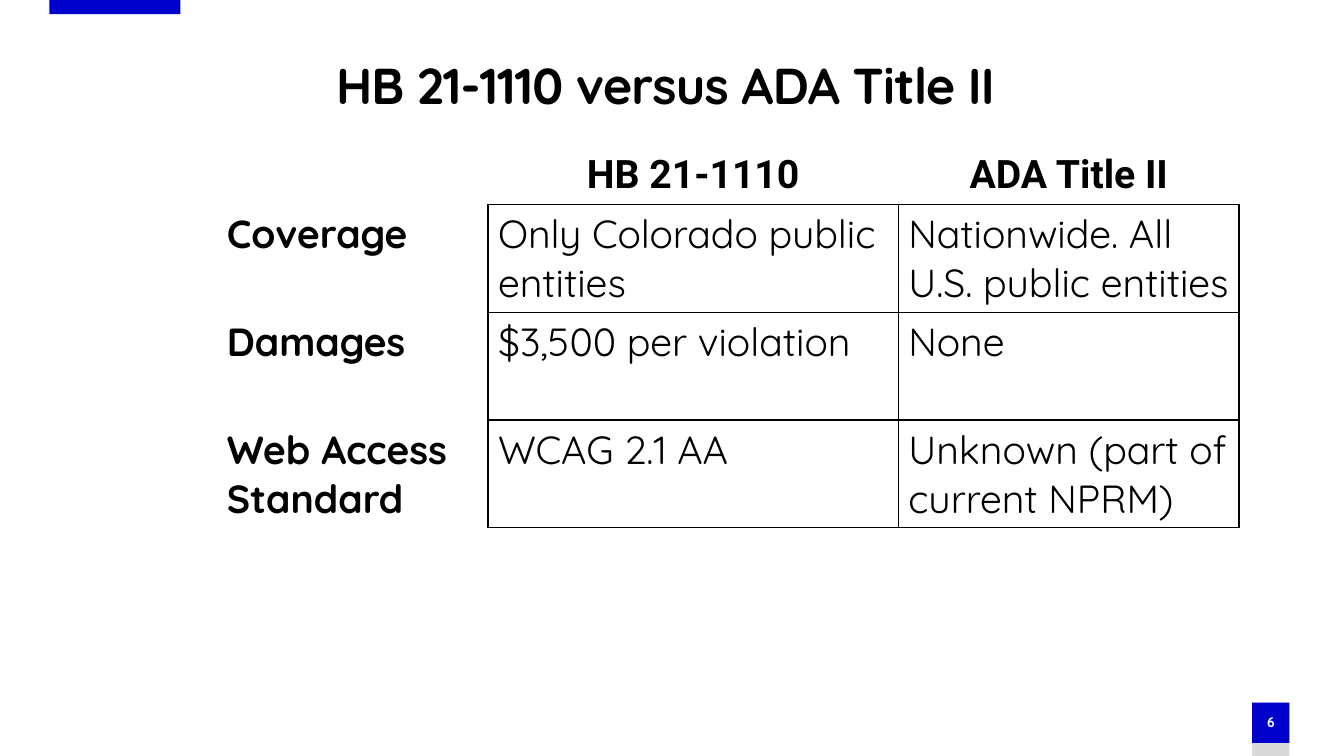
"""Build a slide comparing HB 21-1110 with ADA Title II."""
from lxml.etree import SubElement
from pptx import Presentation
from pptx.dml.color import RGBColor
from pptx.enum.shapes import MSO_SHAPE
from pptx.enum.text import MSO_ANCHOR, PP_ALIGN
from pptx.oxml.ns import qn
from pptx.util import Inches, Pt

TITLE = "HB 21-1110 versus ADA Title II"
PAGE_NUMBER = "6"
ROWS = [
    ("", "HB 21-1110", "ADA Title II"),
    ("Coverage", "Only Colorado public entities", "Nationwide. All U.S. public entities"),
    ("Damages", "$3,500 per violation", "None"),
    ("Web Access Standard", "WCAG 2.1 AA", "Unknown (part of current NPRM)"),
    ("", "", ""),
]
COLUMN_WIDTHS = (2.69, 4.07, 3.38)
ROW_HEIGHTS = (0.56, 1.07, 1.07, 1.07, 0.41)
TABLE_LEFT, TABLE_TOP = 2.15, 1.46
BLOCKS = [
    ((12.42, 6.97, 0.37, 0.53), "D9D9D9", ""),
    ((12.42, 6.97, 0.37, 0.4), "0000CD", PAGE_NUMBER),
    ((0.49, 0, 1.3, 0.14), "0000CD", ""),
]
SIDES = {"a:lnL": (0, -1), "a:lnR": (0, 1), "a:lnT": (-1, 0), "a:lnB": (1, 0)}
BLACK, WHITE = "000000", "FFFFFF"


def color(value):
    return RGBColor.from_string(value)


def style(paragraph, size, text_color, bold=True, name="Quicksand", align=PP_ALIGN.CENTER):
    paragraph.alignment = align
    font = paragraph.font
    font.size, font.bold, font.name = Pt(size), bold, name
    font.color.rgb = color(text_color)


def add_block(slide, box, fill, text):
    shape = slide.shapes.add_shape(MSO_SHAPE.RECTANGLE, *map(Inches, box))
    shape.shadow.inherit = False
    shape.fill.solid()
    shape.fill.fore_color.rgb = color(fill)
    shape.line.fill.background()
    if text:
        frame = shape.text_frame
        frame.margin_left = frame.margin_right = 0
        frame.vertical_anchor = MSO_ANCHOR.MIDDLE
        paragraph = frame.paragraphs[0]
        paragraph.text = text
        paragraph.line_spacing = 0.9
        paragraph.space_before = Pt(10)
        style(paragraph, 10, WHITE)


def add_title(slide):
    box = slide.shapes.add_textbox(*map(Inches, (0.49, 0.55, 12.22, 0.65)))
    frame = box.text_frame
    frame.word_wrap = True
    frame.vertical_anchor = MSO_ANCHOR.MIDDLE
    paragraph = frame.paragraphs[0]
    paragraph.text = TITLE
    paragraph.line_spacing = 0.9
    style(paragraph, 36, BLACK)
    paragraph.runs[0].font._element.set("spc", "-60")


def is_boxed(row, column):
    return 1 <= row <= 3 and 1 <= column <= 2


def set_borders(cell, row, column):
    properties = cell._tc.get_or_add_tcPr()
    for tag, (down, across) in SIDES.items():
        line = SubElement(properties, qn(tag), w=str(Pt(1)))
        if is_boxed(row, column) or is_boxed(row + down, column + across):
            fill = SubElement(line, qn("a:solidFill"))
            SubElement(fill, qn("a:srgbClr"), val=BLACK)
        else:
            SubElement(line, qn("a:noFill"))


def add_comparison(slide):
    size = sum(COLUMN_WIDTHS), sum(ROW_HEIGHTS)
    frame = slide.shapes.add_table(
        len(ROWS), len(COLUMN_WIDTHS), *map(Inches, (TABLE_LEFT, TABLE_TOP, *size)))
    table = frame.table
    table.first_row = table.horz_banding = False
    for column, width in zip(table.columns, COLUMN_WIDTHS):
        column.width = Inches(width)
    for row, height in zip(table.rows, ROW_HEIGHTS):
        row.height = Inches(height)
    for row, texts in enumerate(ROWS):
        for column, text in enumerate(texts):
            cell = table.cell(row, column)
            set_borders(cell, row, column)
            cell.fill.background()
            cell.text = text
            header = row == 0
            style(cell.text_frame.paragraphs[0], 28, BLACK,
                  bold=header or column == 0,
                  name="Roboto" if header else "Quicksand",
                  align=PP_ALIGN.CENTER if header else PP_ALIGN.LEFT)


def main():
    presentation = Presentation()
    presentation.slide_width, presentation.slide_height = Inches(13.33), Inches(7.5)
    slide = presentation.slides.add_slide(presentation.slide_layouts[6])
    for block in BLOCKS:
        add_block(slide, *block)
    add_title(slide)
    add_comparison(slide)
    presentation.save("out.pptx")


if __name__ == "__main__":
    main()
